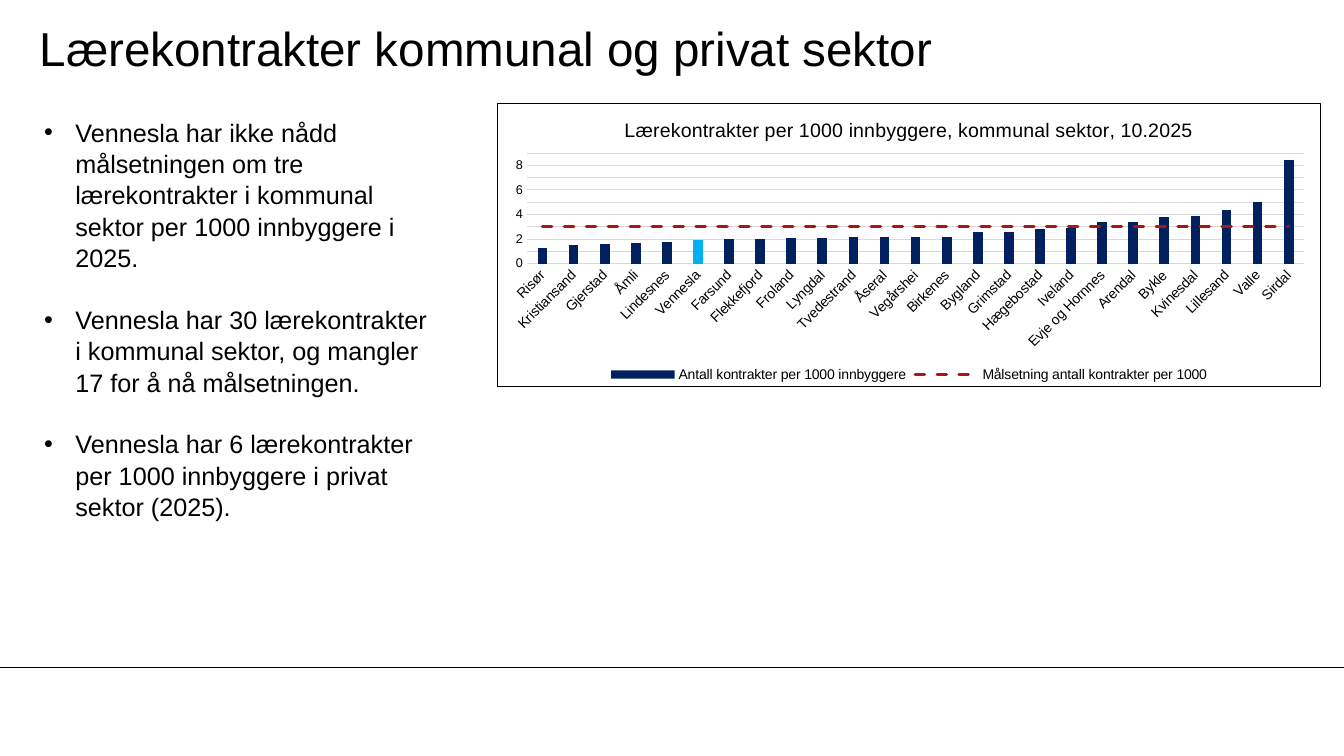
from dataclasses import dataclass

from lxml import etree
from pptx import Presentation
from pptx.chart.data import CategoryChartData
from pptx.dml.color import RGBColor
from pptx.enum.chart import XL_CHART_TYPE, XL_LEGEND_POSITION, XL_MARKER_STYLE, XL_TICK_MARK
from pptx.enum.dml import MSO_LINE
from pptx.enum.shapes import MSO_CONNECTOR
from pptx.enum.text import MSO_ANCHOR, MSO_AUTO_SIZE, PP_ALIGN
from pptx.oxml import parse_xml
from pptx.oxml.ns import nsdecls, qn
from pptx.util import Cm, Pt

COLUMN = XL_CHART_TYPE.COLUMN_CLUSTERED
BOTTOM = XL_LEGEND_POSITION.BOTTOM
NO_MARKER = XL_MARKER_STYLE.NONE
NO_TICK = XL_TICK_MARK.NONE
DASH = MSO_LINE.DASH
STRAIGHT = MSO_CONNECTOR.STRAIGHT
MIDDLE = MSO_ANCHOR.MIDDLE
NO_AUTOFIT = MSO_AUTO_SIZE.NONE
LEFT = PP_ALIGN.LEFT


@dataclass(frozen=True)
class Theme:
    font: str = "Arial"
    black: RGBColor = RGBColor(0x00, 0x00, 0x00)
    grid: RGBColor = RGBColor(0xD9, 0xD9, 0xD9)
    column: RGBColor = RGBColor(0x00, 0x20, 0x60)
    highlight: RGBColor = RGBColor(0x00, 0xB0, 0xF0)
    target: RGBColor = RGBColor(0xA7, 0x17, 0x16)
    title_size: Pt = Pt(34)
    body_size: Pt = Pt(18)
    chart_title_size: Pt = Pt(14)
    label_size: Pt = Pt(10)
    value_size: Pt = Pt(9)
    thin: Pt = Pt(0.75)
    thick: Pt = Pt(2.25)


theme = Theme()


def style_font(font, size):
    font.name = theme.font
    font.size = size
    font.bold = False
    font.color.rgb = theme.black


def style_line(line, color, width):
    line.color.rgb = color
    line.width = width


presentation = Presentation()
presentation.slide_width = Cm(33.87)
presentation.slide_height = Cm(19.05)
slide = presentation.slides.add_slide(presentation.slide_layouts[5])

footer_line = slide.shapes.add_connector(STRAIGHT, Cm(0), Cm(16.81), Cm(33.87), Cm(16.81))
style_line(footer_line.line, theme.black, theme.thin)
etree.SubElement(footer_line._element.spPr, qn("a:effectLst"))

title = slide.shapes.title
title.left, title.top, title.width, title.height = Cm(1), Cm(0.25), Cm(28.19), Cm(1.9)
title_frame = title.text_frame
title_frame.text = "Lærekontrakter kommunal og privat sektor"
title_frame.auto_size = NO_AUTOFIT
title_frame.vertical_anchor = MIDDLE
title_frame.margin_left = title_frame.margin_right = Cm(0)
title_frame.margin_top = title_frame.margin_bottom = Cm(0)
title_frame.paragraphs[0].alignment = LEFT
style_font(title_frame.paragraphs[0].runs[0].font, theme.title_size)

points = [
    "Vennesla har ikke nådd målsetningen om tre lærekontrakter i kommunal sektor per 1000 innbyggere i 2025.",
    "Vennesla har 30 lærekontrakter i kommunal sektor, og mangler 17 for å nå målsetningen.",
    "Vennesla har 6 lærekontrakter per 1000 innbyggere i privat sektor (2025).",
]
body_frame = slide.shapes.add_textbox(Cm(0.86), Cm(2.79), Cm(10.41), Cm(12.57)).text_frame
body_frame.word_wrap = True
body_frame.text = "\n".join(points)
for index, paragraph in enumerate(body_frame.paragraphs):
    properties = paragraph._p.get_or_add_pPr()
    properties.set("marL", str(Cm(0.79)))
    properties.set("indent", str(-Cm(0.79)))
    etree.SubElement(properties, qn("a:buFont"), typeface=theme.font)
    etree.SubElement(properties, qn("a:buChar"), char="•")
    paragraph.line_spacing = 1.04
    if index:
        paragraph.space_before = Pt(21.6)
    style_font(paragraph.runs[0].font, theme.body_size)

contracts = {
    "Risør": 1.3, "Kristiansand": 1.5, "Gjerstad": 1.6, "Åmli": 1.7, "Lindesnes": 1.8,
    "Vennesla": 1.9, "Farsund": 2, "Flekkefjord": 2, "Froland": 2.1, "Lyngdal": 2.1,
    "Tvedestrand": 2.2, "Åseral": 2.2, "Vegårshei": 2.2, "Birkenes": 2.2, "Bygland": 2.6,
    "Grimstad": 2.6, "Hægebostad": 2.8, "Iveland": 2.9, "Evje og Hornnes": 3.4, "Arendal": 3.4,
    "Bykle": 3.8, "Kvinesdal": 3.9, "Lillesand": 4.4, "Valle": 5, "Sirdal": 8.4,
}
chart_data = CategoryChartData(number_format="0.0")
chart_data.categories = list(contracts)
chart_data.add_series("Antall kontrakter per 1000 innbyggere", contracts.values())
chart_data.add_series("Målsetning antall kontrakter per 1000", [3] * len(contracts))
chart = slide.shapes.add_chart(COLUMN, Cm(12.52), Cm(2.59), Cm(20.78), Cm(7.16), chart_data).chart
style_font(chart.font, theme.label_size)

chart.has_title = True
chart_title = chart.chart_title
chart_title.text_frame.text = "Lærekontrakter per 1000 innbyggere, kommunal sektor, 10.2025"
style_font(chart_title.text_frame.paragraphs[0].runs[0].font, theme.chart_title_size)
chart_title.include_in_layout = False

chart.has_legend = True
chart.legend.position = BOTTOM
chart.legend.include_in_layout = False
style_font(chart.legend.font, theme.label_size)

category_axis = chart.category_axis
category_axis.major_tick_mark = NO_TICK
style_line(category_axis.format.line, theme.grid, theme.thin)
style_font(category_axis.tick_labels.font, theme.label_size)
category_axis._element.find(qn("c:txPr")).find(qn("a:bodyPr")).set("rot", "-2700000")

value_axis = chart.value_axis
value_axis.minimum_scale = 0
value_axis.maximum_scale = 9
value_axis.major_unit = 1
value_axis.major_tick_mark = NO_TICK
value_axis.format.line.fill.background()
value_axis.tick_labels.number_format = "0"
value_axis.tick_labels.number_format_is_linked = False
style_font(value_axis.tick_labels.font, theme.value_size)
style_line(value_axis.major_gridlines.format.line, theme.grid, theme.thin)

column_plot = chart.plots[0]
column_plot.vary_by_categories = False
column_plot.gap_width = 219
column_plot.overlap = -27
column_series, target_series = column_plot.series
column_series.format.fill.solid()
column_series.format.fill.fore_color.rgb = theme.column
vennesla_fill = column_series.points[list(contracts).index("Vennesla")].format.fill
vennesla_fill.solid()
vennesla_fill.fore_color.rgb = theme.highlight

bar_chart = chart._chartSpace.find(f".//{qn('c:barChart')}")
line_chart = parse_xml(
    f'<c:lineChart {nsdecls("c")}><c:grouping val="standard"/><c:varyColors val="0"/></c:lineChart>'
)
target_element = bar_chart.findall(qn("c:ser"))[1]
for bar_setting in target_element.findall(qn("c:invertIfNegative")):
    target_element.remove(bar_setting)
line_chart.append(target_element)
etree.SubElement(line_chart, qn("c:marker"), val="1")
for axis_id in bar_chart.findall(qn("c:axId")):
    etree.SubElement(line_chart, qn("c:axId"), val=str(axis_id.get("val")))
bar_chart.addnext(line_chart)

target_line = chart.plots[1].series[0]
target_line.smooth = False
target_line.marker.style = NO_MARKER
style_line(target_line.format.line, theme.target, theme.thick)
target_line.format.line.dash_style = DASH
target_element.find(qn("c:spPr")).find(qn("a:ln")).set("cap", "rnd")

plot_area = bar_chart.getparent()
for old_layout in plot_area.findall(qn("c:layout")):
    plot_area.remove(old_layout)
plot_area.insert(0, parse_xml(
    f'<c:layout {nsdecls("c")}><c:manualLayout><c:layoutTarget val="inner"/>'
    '<c:xMode val="edge"/><c:yMode val="edge"/><c:x val="0.036"/><c:y val="0.176"/>'
    '<c:w val="0.944"/><c:h val="0.391"/></c:manualLayout></c:layout>'
))
chart._chartSpace.find(qn("c:chart")).addnext(parse_xml(
    f'<c:spPr {nsdecls("c", "a")}><a:noFill/><a:ln w="{theme.thin}"><a:solidFill>'
    f'<a:srgbClr val="{theme.black}"/></a:solidFill></a:ln></c:spPr>'
))

presentation.save("out.pptx")
